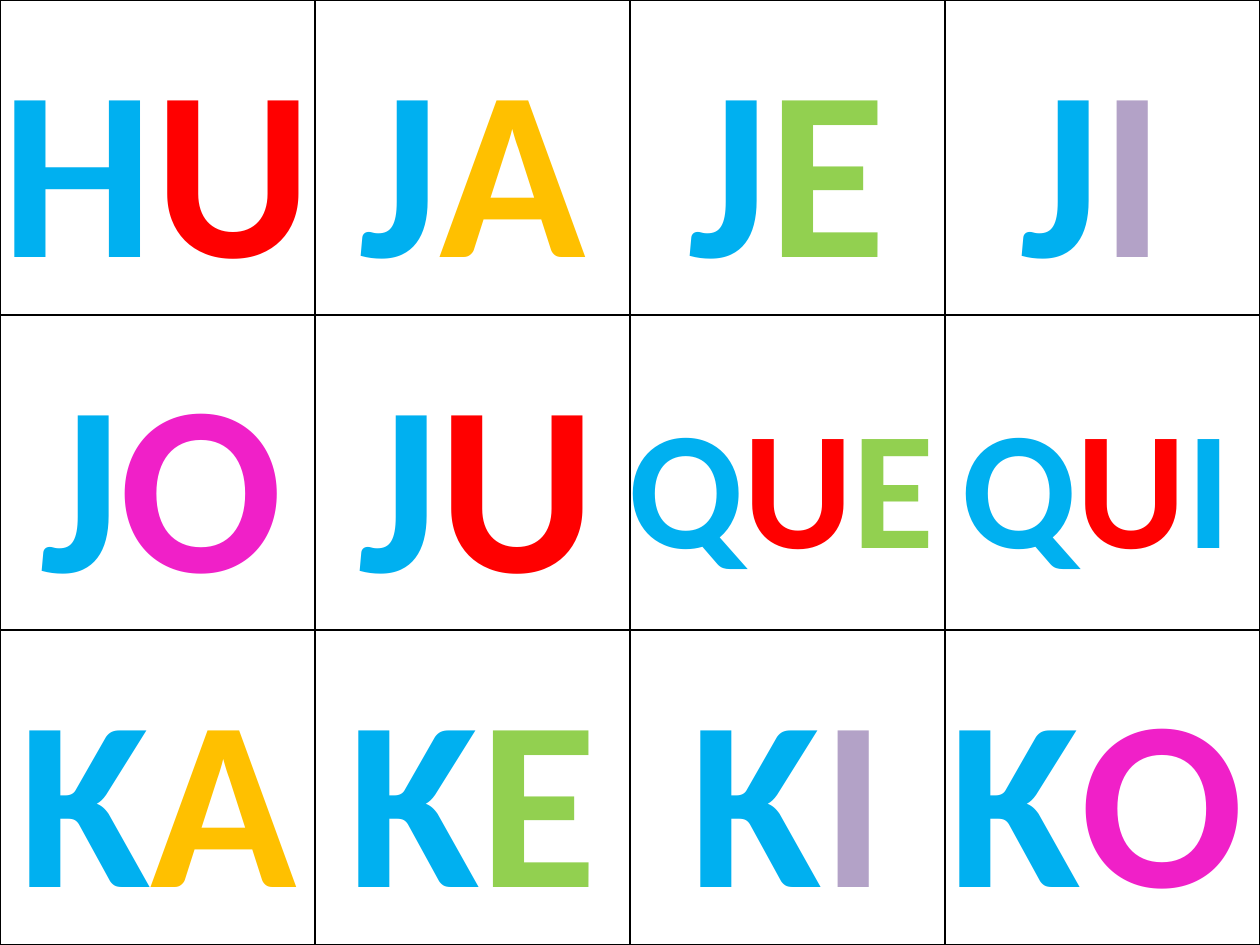
from lxml.etree import SubElement
from pptx import Presentation
from pptx.dml.color import RGBColor
from pptx.enum.text import MSO_AUTO_SIZE, PP_ALIGN
from pptx.oxml import parse_xml
from pptx.oxml.ns import nsdecls, qn
from pptx.util import Cm, Pt

CELL = 6.35
BLUE = "00B0F0"
VOWELS = {"A": "FFC000", "E": "92D050", "I": "B3A2C7", "O": "F020C8", "U": "FF0000"}
CARDS = [
    [("HU", -0.41, 7.14), ("JA", -0.2, 6.76), ("JE", 0, 6.35), ("JI", -0.41, 6.76)],
    [("JO", -0.41, 7.34), ("JU", -0.2, 6.93), ("QUE", -0.41, 6.93), ("QUI", -0.41, 6.93)],
    [("KA", -0.2, 6.76), ("KE", -0.2, 6.76), ("KI", 0, 6.35), ("KO", -0.41, 6.93)],
]


def color(value):
    return RGBColor.from_string(value)


def line_xml(tag, value):
    return parse_xml(
        f'<a:{tag} {nsdecls("a")} w="12700"><a:solidFill>'
        f'<a:srgbClr val="{value}"/></a:solidFill></a:{tag}>'
    )


def add_grid(slide, left, top, rows, cols):
    frame = slide.shapes.add_table(
        rows, cols, Cm(left), Cm(top), Cm(cols * CELL), Cm(rows * CELL)
    )
    table = frame.table
    table.first_row = table.horz_banding = False
    for cell in table.iter_cells():
        tcPr = cell._tc.get_or_add_tcPr()
        for tag in ("lnL", "lnR", "lnT", "lnB"):
            tcPr.append(line_xml(tag, "000000"))
        cell.fill.solid()
        cell.fill.fore_color.rgb = color("FFFFFF")


def letter_color(syllable, i):
    if i == 0 or syllable == "QUI" and i == 2:
        return BLUE
    return VOWELS[syllable[i]]


def add_card(slide, left, top, syllable, offset, width):
    size, drop, height = (138, 0.2, 6.15) if len(syllable) == 2 else (96, 1.19, 4.37)
    box = slide.shapes.add_textbox(
        Cm(left + offset), Cm(top + drop), Cm(width), Cm(height)
    )
    tf = box.text_frame
    tf.word_wrap = True
    tf.auto_size = MSO_AUTO_SIZE.SHAPE_TO_FIT_TEXT
    p = tf.paragraphs[0]
    p.alignment = PP_ALIGN.CENTER
    p.font.name = "Calibri"
    p.font.size = Pt(size)
    p.font.bold = True
    for i, letter in enumerate(syllable):
        r = p.add_run()
        r.text = letter
        r.font.color.rgb = color(letter_color(syllable, i))
        r._r.get_or_add_rPr().insert(0, line_xml("ln", "054697"))


def main():
    prs = Presentation()
    prs.slide_width, prs.slide_height = Cm(4 * CELL), Cm(3 * CELL)
    slide = prs.slides.add_slide(prs.slide_layouts[6])
    add_grid(slide, 0, 0, 3, 4)
    for row, cards in enumerate(CARDS):
        for col, card in enumerate(cards):
            add_card(slide, col * CELL, row * CELL, *card)
    prs.save("out.pptx")


if __name__ == "__main__":
    main()
